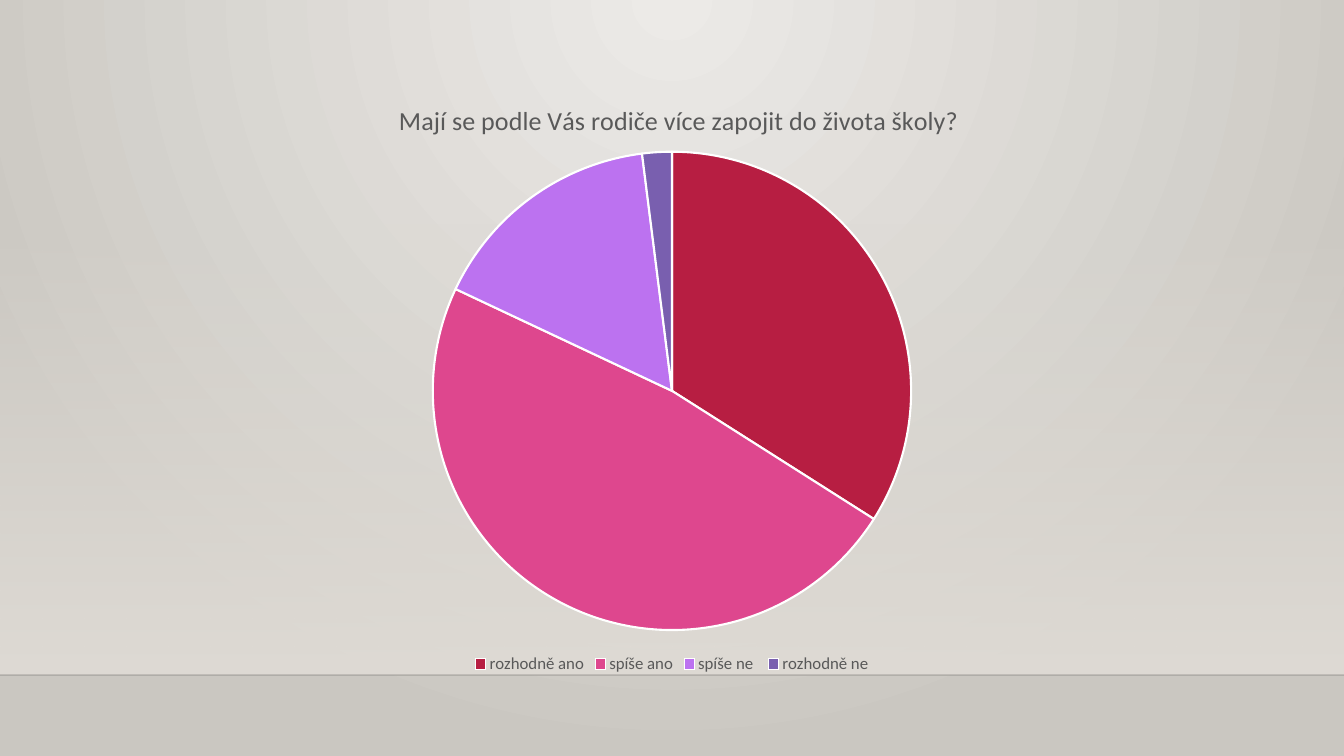
from dataclasses import dataclass

from lxml import etree
from pptx import Presentation, util as u
from pptx.chart.data import CategoryChartData
from pptx.dml.color import RGBColor
from pptx.enum import chart as ch, shapes
from pptx.oxml.ns import qn

WIDE, HIGH = 1344, 756
SCALE = 12192000 / WIDE


@dataclass(frozen=True)
class Theme:
    font: str = "Calibri"
    title: float = 18.6
    legend: float = 12
    ink: str = "595959"
    light: str = "ECEAE7"
    dark: str = "CAC7C1"
    wall: str = "DFDBD5"
    edge: str = "000001"
    border: str = "FFFFFF"
    slices: tuple = ("B71E42", "DE478E", "BC72F0", "795FAF")


LOOK = Theme()


def px(n):
    return u.Emu(round(n * SCALE))


def rgb(code):
    return RGBColor.from_string(code)


def sub(node, tag, **attrs):
    return etree.SubElement(node, qn(tag), **attrs)


def fade(node, percent):
    """Set the opacity of the first plain colour inside node."""
    color = next(node.iter(qn("a:srgbClr")))
    sub(color, "a:alpha", val=str(percent * 1000))


def blend(fill, *codes):
    fill.gradient()
    for stop, code in zip(fill.gradient_stops, codes):
        stop.color.rgb = rgb(code)


def style(font, size):
    font.name = LOOK.font
    font.size = u.Pt(size)
    font.bold = False
    font.color.rgb = rgb(LOOK.ink)


def place(node, index, **parts):
    """Give a chart part a fixed layout in fractions of the chart."""
    for old in node.findall(qn("c:layout")):
        node.remove(old)
    layout = etree.Element(qn("c:layout"))
    node.insert(index, layout)
    manual = sub(layout, "c:manualLayout")
    if "w" in parts:
        sub(manual, "c:layoutTarget", val="inner")
    for key in ("x", "y"):
        sub(manual, f"c:{key}Mode", val="edge")
    for key, val in parts.items():
        sub(manual, f"c:{key}", val=str(val))


def add_back(slide):
    blend(slide.background.fill, LOOK.light, LOOK.dark)
    grad = next(slide.element.iter(qn("a:gradFill")))
    grad.remove(grad.find(qn("a:lin")))
    ring = sub(grad, "a:path", path="circle")
    sub(ring, "a:fillToRect", l="43000", t="0", r="43000", b="100000")


def add_wall(slide, top, height):
    wall = slide.shapes.add_shape(
        shapes.MSO_SHAPE.RECTANGLE, 0, px(top), px(WIDE), px(height))
    wall.shadow.inherit = False
    wall.line.fill.background()
    blend(wall.fill, LOOK.wall, LOOK.wall)
    wall.fill.gradient_angle = 270
    fade(wall.element.spPr, 0)


def add_line(slide, y):
    line = slide.shapes.add_connector(
        shapes.MSO_CONNECTOR.STRAIGHT, 0, px(y), px(WIDE), px(y))
    line.line.width = u.Pt(1)
    line.line.color.rgb = rgb(LOOK.edge)
    fade(line.element.spPr, 20)
    sub(line.element.spPr, "a:effectLst")


def add_pie(slide, box, title, answers):
    data = CategoryChartData()
    data.categories = list(answers)
    data.add_series("Series 1", list(answers.values()))
    chart = slide.shapes.add_chart(
        ch.XL_CHART_TYPE.PIE, *map(px, box), data).chart
    style(chart.font, 10)

    # Title
    chart.has_title = True
    frame = chart.chart_title.text_frame
    frame.text = title
    style(frame.paragraphs[0].runs[0].font, LOOK.title)
    head = next(chart.element.iter(qn("c:title")))
    place(head, 1, x=0.19, y=0.03)

    # Legend
    chart.has_legend = True
    chart.legend.position = ch.XL_LEGEND_POSITION.BOTTOM
    chart.legend.include_in_layout = False
    style(chart.legend.font, LOOK.legend)

    # Slices
    plot = chart.plots[0]
    plot.vary_by_categories = True
    for i, code in enumerate(LOOK.slices):
        part = plot.series[0].points[i].format
        part.fill.solid()
        part.fill.fore_color.rgb = rgb(code)
        part.line.color.rgb = rgb(LOOK.border)
        part.line.width = u.Pt(1.5)
    area = next(chart.element.iter(qn("c:plotArea")))
    place(area, 0, x=0.23, y=0.12, w=0.54, h=0.8)


def main():
    deck = Presentation()
    deck.slide_width, deck.slide_height = px(WIDE), px(HIGH)
    slide = deck.slides.add_slide(deck.slide_layouts[6])

    # Backdrop
    floor, top = 675, 223
    add_back(slide)
    add_wall(slide, top, floor - top)
    add_line(slide, floor)

    # Survey chart
    add_pie(slide, (224, 80, 896, 598),
            "Mají se podle Vás rodiče více zapojit do života školy?",
            {"rozhodně ano": 34, "spíše ano": 48,
             "spíše ne ": 16, "rozhodně ne": 2})
    deck.save("out.pptx")


if __name__ == "__main__":
    main()
